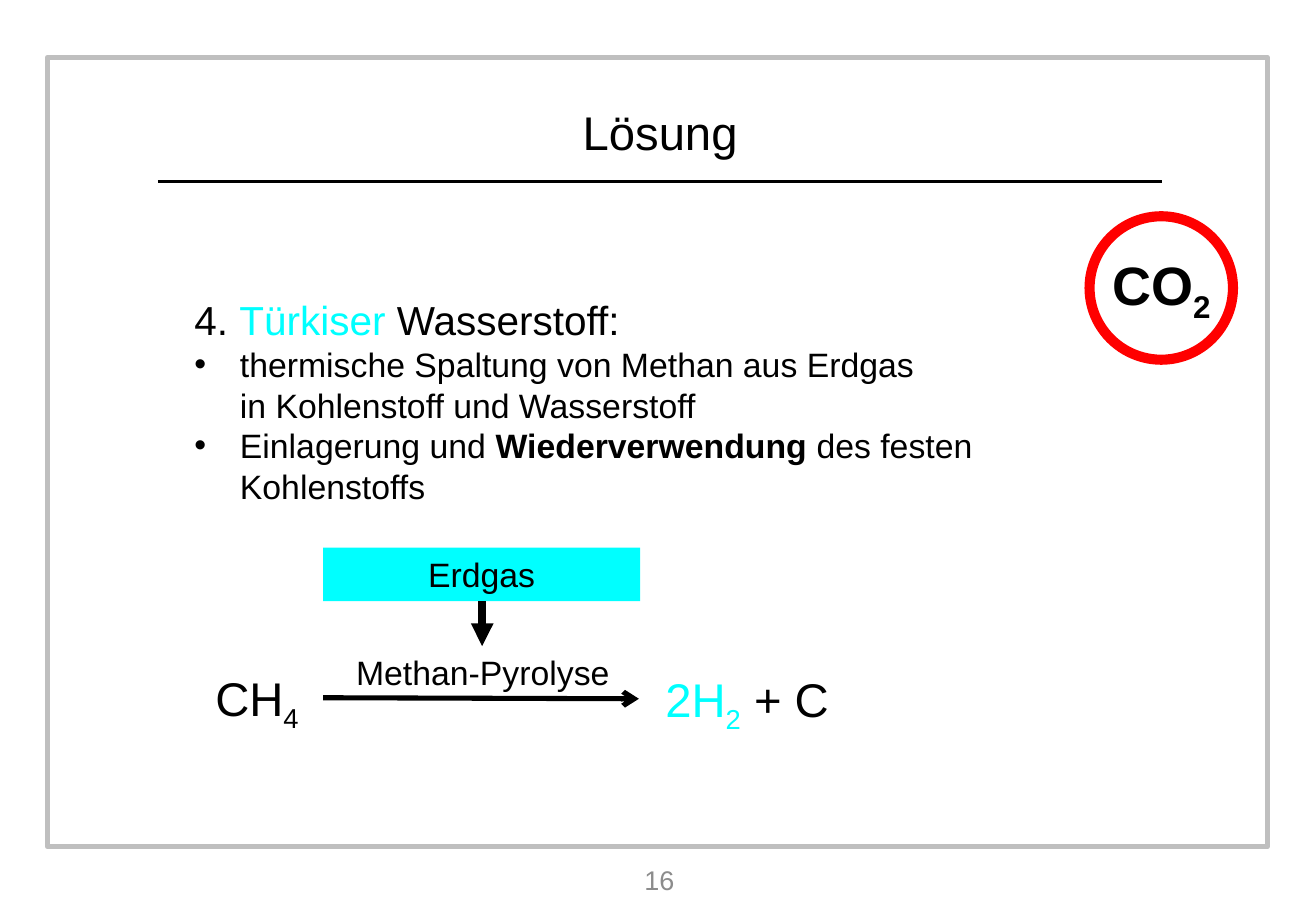
import pptx
import pptx.util
import pptx.dml.color
import pptx.enum.shapes
import pptx.enum.text
import pptx.oxml.ns
from lxml import etree

Pt = pptx.util.Pt
SHAPE = pptx.enum.shapes.MSO_SHAPE
ALIGN = pptx.enum.text.PP_ALIGN
ANCHOR = pptx.enum.text.MSO_ANCHOR
COLORS = {
    "black": "000000",
    "white": "FFFFFF",
    "cyan": "00FFFF",
    "red": "FF0000",
    "frame": "BFBFBF",
    "page": "8C8C8C",
}


def tint(name):
    return pptx.dml.color.RGBColor.from_string(COLORS[name])


def sub(node, tag, **attrs):
    return etree.SubElement(node, pptx.oxml.ns.qn(tag), attrs)


def place(shape, left, top, width, height):
    shape.left, shape.top = Pt(left), Pt(top)
    shape.width, shape.height = Pt(width), Pt(height)


def style(para, size, color="black", align=ALIGN.CENTER, bold=False):
    para.alignment = align
    para.space_before = para.space_after = Pt(0)
    font = para.font
    font.name, font.size, font.bold = "Arial", Pt(size), bold
    font.color.rgb = tint(color)


def write(para, text, color=None, bold=None, low=False):
    run = para.add_run()
    run.text = text
    if color:
        run.font.color.rgb = tint(color)
    if bold:
        run.font.bold = True
    if low:
        run.font._element.set("baseline", "-25000")


def label(slide, box, parts, size, color="black", anchor=ANCHOR.TOP):
    shape = slide.shapes.add_textbox(*map(Pt, box))
    frame = shape.text_frame
    frame.word_wrap = True
    frame.vertical_anchor = anchor
    para = frame.paragraphs[0]
    style(para, size, color)
    for part in parts:
        write(para, **part)


def figure(slide, kind, box, fill=None, line=None, width=0):
    shape = slide.shapes.add_shape(kind, *map(Pt, box))
    shape.shadow.inherit = False
    if fill:
        shape.fill.solid()
        shape.fill.fore_color.rgb = tint(fill)
    else:
        shape.fill.background()
    if line:
        shape.line.color.rgb = tint(line)
        shape.line.width = Pt(width)
    else:
        shape.line.fill.background()
    return shape


def stroke(slide, ends, width, head=None):
    link = slide.shapes.add_connector(
        pptx.enum.shapes.MSO_CONNECTOR.STRAIGHT, *map(Pt, ends))
    link.line.color.rgb = tint("black")
    link.line.width = Pt(width)
    if head:
        sub(link.line._get_or_add_ln(), "a:tailEnd", type=head)
    sub(link._element.spPr, "a:effectLst")


def title(slide):
    shape = slide.shapes.title
    place(shape, 337.5, 56.9, 107.5, 42.5)
    frame = shape.text_frame
    frame.word_wrap = False
    frame.auto_size = pptx.enum.text.MSO_AUTO_SIZE.NONE
    frame.vertical_anchor = ANCHOR.MIDDLE
    para = frame.paragraphs[0]
    style(para, 28)
    write(para, "Lösung")


def item(frame, size, bullet):
    para = frame.add_paragraph() if bullet else frame.paragraphs[0]
    style(para, size, align=ALIGN.LEFT)
    props = para._p.get_or_add_pPr()
    indent = Pt(27) if bullet else 0
    props.set("marL", str(indent))
    props.set("indent", str(-indent))
    mark = sub(props, "a:buChar", char="•") if bullet else sub(props, "a:buNone")
    props.find(pptx.oxml.ns.qn("a:defRPr")).addprevious(mark)
    return para


def body(slide):
    shape = slide.placeholders[1]
    place(shape, 108, 113, 566.6, 249)
    frame = shape.text_frame
    frame.word_wrap = True
    frame.auto_size = pptx.enum.text.MSO_AUTO_SIZE.NONE
    frame.vertical_anchor = ANCHOR.MIDDLE
    para = item(frame, 24, False)
    write(para, "4. ")
    write(para, "Türkiser", color="cyan")
    write(para, " Wasserstoff:")
    para = item(frame, 20, True)
    write(para, "thermische Spaltung von Methan aus Erdgas")
    para.add_line_break()
    write(para, "in Kohlenstoff und Wasserstoff")
    para = item(frame, 20, True)
    write(para, "Einlagerung und ")
    write(para, "Wiederverwendung", bold=True)
    write(para, " des festen Kohlenstoffs")


def sign(slide):
    ring = figure(slide, SHAPE.OVAL, (645.8, 128.2, 85, 85), "white", "red", 6)
    frame = ring.text_frame
    frame.margin_left = frame.margin_right = 0
    frame.margin_top = frame.margin_bottom = 0
    frame.word_wrap = True
    frame.vertical_anchor = ANCHOR.MIDDLE
    para = frame.paragraphs[0]
    style(para, 32, bold=True)
    write(para, "CO")
    write(para, "2", low=True)


def process(slide):
    label(slide, (191.5, 383, 189.4, 31.7), [{"text": "Methan-Pyrolyse"}], 20)
    label(slide, (112.3, 393.1, 80, 41),
          [{"text": "CH"}, {"text": "4", "low": True}], 28)
    stroke(slide, (191.5, 413.6, 378.7, 414.2), 3, "arrow")
    label(slide, (378.7, 393.8, 128.2, 41),
          [{"text": "2H", "color": "cyan"},
           {"text": "2", "color": "cyan", "low": True},
           {"text": " + C"}], 28)
    gas = figure(slide, SHAPE.RECTANGLE, (191.5, 324.7, 188, 31.7), "cyan")
    gas.text_frame.vertical_anchor = ANCHOR.TOP
    para = gas.text_frame.paragraphs[0]
    style(para, 20)
    write(para, "Erdgas")
    stroke(slide, (285.8, 356.4, 285.8, 383), 4.5, "triangle")


def main():
    deck = pptx.Presentation()
    deck.slide_width, deck.slide_height = Pt(780), Pt(540)
    slide = deck.slides.add_slide(deck.slide_layouts[1])
    figure(slide, SHAPE.RECTANGLE, (28.1, 34, 723, 468), line="frame", width=3)
    stroke(slide, (93.6, 107.7, 689, 107.7), 1.5)
    title(slide)
    body(slide)
    label(slide, (303, 507.6, 175.7, 28), [{"text": "16"}], 16, "page", ANCHOR.MIDDLE)
    process(slide)
    sign(slide)
    deck.save("out.pptx")


if __name__ == "__main__":
    main()
